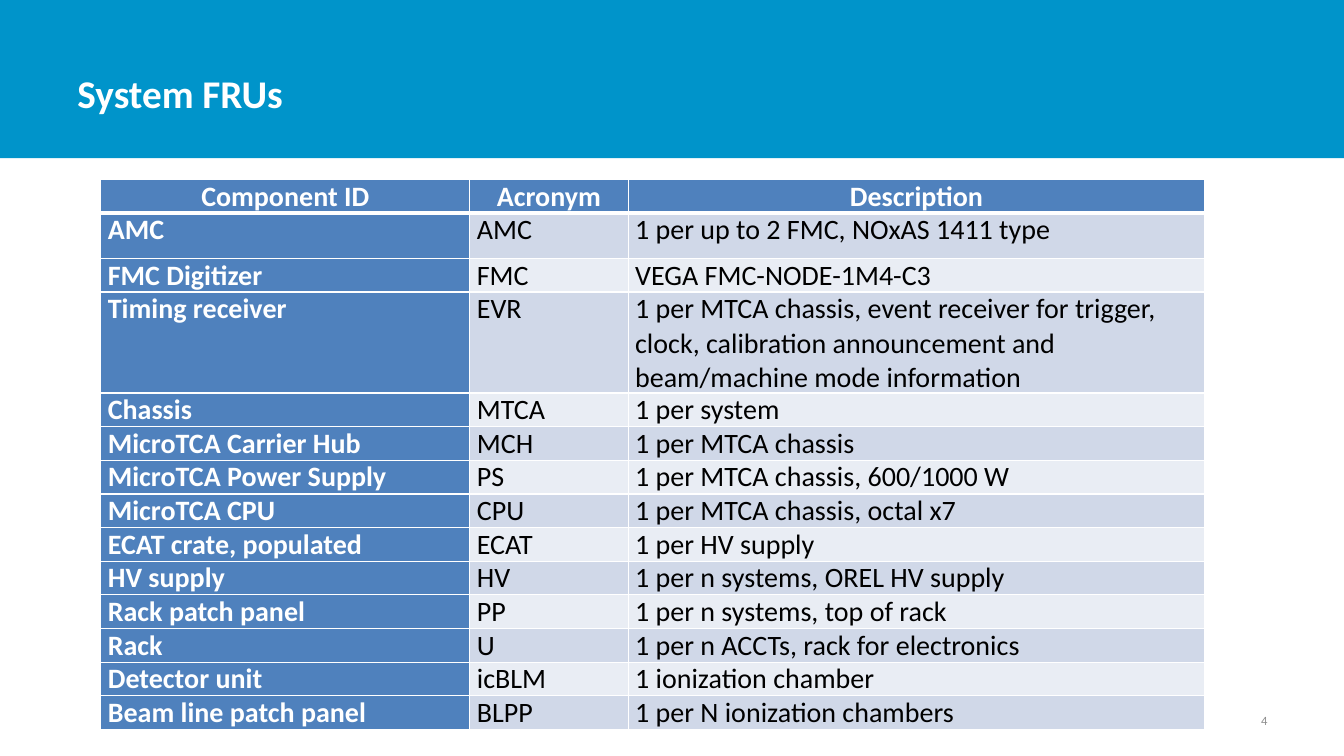
from lxml import etree
from pptx import Presentation
from pptx.dml.color import RGBColor
from pptx.enum.shapes import MSO_SHAPE
from pptx.enum.text import MSO_ANCHOR, PP_ALIGN
from pptx.oxml.ns import qn
from pptx.util import Inches, Pt

RECT = MSO_SHAPE.RECTANGLE
MIDDLE = MSO_ANCHOR.MIDDLE
LEFT, CENTER, RIGHT = PP_ALIGN.LEFT, PP_ALIGN.CENTER, PP_ALIGN.RIGHT
FONT = "Calibri"
WHITE, BLACK, GREY = "FFFFFF", "000000", "8C8C8C"
CYAN, BLUE = "0094CA", "4F81BD"
BANDS = ["D0D8E8", "E9EDF4"]
COLS = [3.66, 1.57, 5.72]
HEIGHTS = [0.32, 0.45, 0.31, 0.93] + [0.31] * 10
ROWS = [
    ("Component ID", "Acronym", "Description"),
    ("AMC", "AMC", "1 per up to 2 FMC, NOxAS 1411 type"),
    ("FMC Digitizer", "FMC", "VEGA FMC-NODE-1M4-C3"),
    ("Timing receiver", "EVR",
     "1 per MTCA chassis, event receiver for trigger, clock, "
     "calibration announcement and beam/machine mode information"),
    ("Chassis", "MTCA", "1 per system"),
    ("MicroTCA Carrier Hub", "MCH", "1 per MTCA chassis"),
    ("MicroTCA Power Supply", "PS", "1 per MTCA chassis, 600/1000 W"),
    ("MicroTCA CPU", "CPU", "1 per MTCA chassis, octal x7"),
    ("ECAT crate, populated", "ECAT", "1 per HV supply"),
    ("HV supply", "HV", "1 per n systems, OREL HV supply"),
    ("Rack patch panel", "PP", "1 per n systems, top of rack"),
    ("Rack", "U", "1 per n ACCTs, rack for electronics"),
    ("Detector unit", "icBLM", "1 ionization chamber"),
    ("Beam line patch panel", "BLPP", "1 per N ionization chambers"),
]


def color(code):
    """Turn a hex string into a colour."""
    return RGBColor.from_string(code)


def write(frame, text, size, code, bold=False, align=LEFT):
    """Put one formatted paragraph into a text frame."""
    frame.text = text
    para = frame.paragraphs[0]
    para.alignment = align
    font = para.runs[0].font
    font.name, font.size, font.bold = FONT, Pt(size), bold
    font.color.rgb = color(code)


def add_band(slide):
    """Draw the coloured band behind the title."""
    band = slide.shapes.add_shape(RECT, 0, 0, Inches(13.33), Inches(1.57))
    band.shadow.inherit = False
    band.fill.solid()
    band.fill.fore_color.rgb = color(CYAN)
    band.line.fill.background()


def add_label(slide, place, *style):
    """Add a vertically centred text box."""
    box = slide.shapes.add_textbox(*map(Inches, place))
    frame = box.text_frame
    frame.word_wrap = True
    frame.vertical_anchor = MIDDLE
    write(frame, *style)


def add_edge(cell, side, width):
    """Draw a white border on one side of a cell."""
    props = cell._tc.get_or_add_tcPr()
    line = etree.SubElement(props, qn("a:ln" + side), w=str(Pt(width)))
    fill = etree.SubElement(line, qn("a:solidFill"))
    etree.SubElement(fill, qn("a:srgbClr"), val=WHITE)


def set_cell(cell, text, row, col):
    """Fill and format a cell by its place in the table."""
    head = row == 0
    strong = head or col == 0
    cell.margin_left = cell.margin_right = Inches(0.07)
    cell.margin_top = cell.margin_bottom = 0
    write(cell.text_frame, text, 20, WHITE if strong else BLACK,
          strong, CENTER if head else LEFT)
    for side in "LRTB":
        thick = (head and side == "B") or (row == 1 and side == "T")
        add_edge(cell, side, 3 if thick else 1)
    cell.fill.solid()
    cell.fill.fore_color.rgb = color(BLUE if strong else BANDS[(row - 1) % 2])


def add_parts(slide):
    """Add the table of system components."""
    frame = slide.shapes.add_table(
        len(ROWS), len(COLS), Inches(1), Inches(1.78),
        Inches(sum(COLS)), Inches(sum(HEIGHTS)))
    table = frame.table
    for col, width in enumerate(COLS):
        table.columns[col].width = Inches(width)
    for row, texts in enumerate(ROWS):
        table.rows[row].height = Inches(HEIGHTS[row])
        for col, text in enumerate(texts):
            set_cell(table.cell(row, col), text, row, col)


def main():
    """Build and save the slide."""
    deck = Presentation()
    deck.slide_width, deck.slide_height = Inches(13.33), Inches(7.5)
    slide = deck.slides.add_slide(deck.slide_layouts[6])
    add_band(slide)
    add_label(slide, (0.67, 0.3, 10.41, 1.25), "System FRUs", 28, WHITE, True)
    add_parts(slide)
    add_label(slide, (9.56, 6.95, 3.11, 0.4), "4", 9, GREY, False, RIGHT)
    deck.save("out.pptx")


if __name__ == "__main__":
    main()
